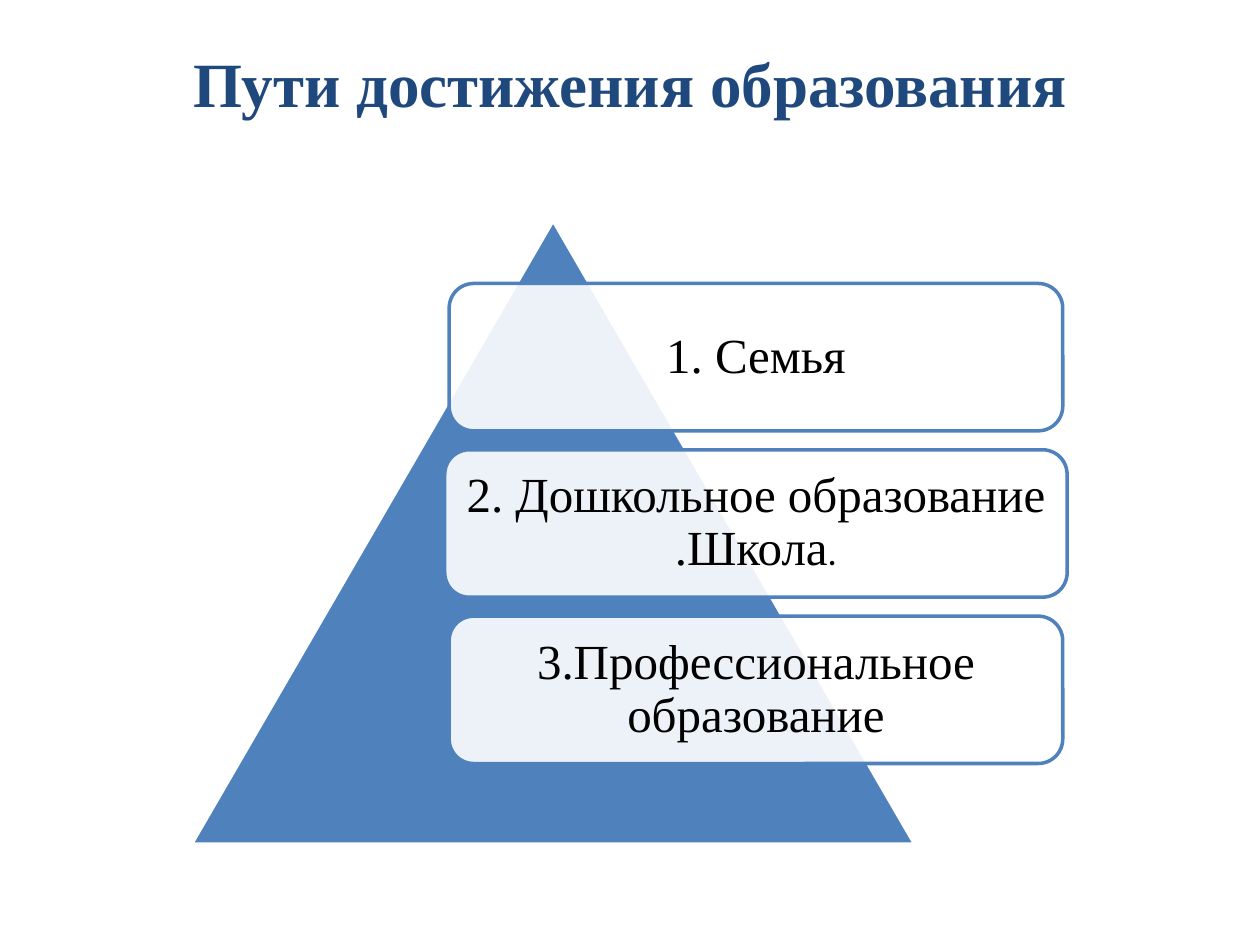
from dataclasses import dataclass

from lxml.etree import SubElement
from pptx import Presentation
from pptx.dml.color import RGBColor
from pptx.enum.shapes import MSO_SHAPE as Shape
from pptx.enum.text import MSO_ANCHOR as Anchor, PP_ALIGN as Align
from pptx.oxml.ns import qn
from pptx.util import Inches, Pt


@dataclass(frozen=True)
class Theme:
    accent: RGBColor = RGBColor(0x4F, 0x81, 0xBD)
    heading: RGBColor = RGBColor(0x1F, 0x49, 0x7D)
    text: RGBColor = RGBColor(0, 0, 0)
    paper: RGBColor = RGBColor(0xFF, 0xFF, 0xFF)
    font: str = "Times New Roman"
    small_font: str = "Calibri"
    title_size: int = 36
    step_size: int = 28
    small_size: int = 21
    line_width: int = 2
    step_opacity: int = 90


class SlideBuilder:
    def __init__(self, slide, theme):
        self.slide = slide
        self.theme = theme

    def set_font(self, font, name, size, color, bold=False):
        font.name = name
        font.size = Pt(size)
        font.color.rgb = color
        font.bold = bold

    def add_title(self, text, left, top, width, height):
        title = self.slide.shapes.title
        title.left, title.top = Inches(left), Inches(top)
        title.width, title.height = Inches(width), Inches(height)
        title.text_frame.text = text
        title.text_frame.vertical_anchor = Anchor.TOP
        paragraph = title.text_frame.paragraphs[0]
        paragraph.alignment = Align.CENTER
        self.set_font(paragraph.font, self.theme.font, self.theme.title_size,
                      self.theme.heading, bold=True)

    def add_outlined(self, kind, left, top, width, height, fill, line):
        shape = self.slide.shapes.add_shape(
            kind, Inches(left), Inches(top), Inches(width), Inches(height))
        shape.shadow.inherit = False
        shape.fill.solid()
        shape.fill.fore_color.rgb = fill
        shape.line.color.rgb = line
        shape.line.width = Pt(self.theme.line_width)
        return shape

    def add_pyramid(self, left, top, width, height):
        self.add_outlined(Shape.ISOSCELES_TRIANGLE, left, top, width, height,
                          self.theme.accent, self.theme.paper)

    def add_step(self, text, ending, center, top, width, height):
        theme = self.theme
        shape = self.add_outlined(Shape.ROUNDED_RECTANGLE, center - width / 2, top,
                                  width, height, theme.paper, theme.accent)
        color = shape.fill._xPr.find(qn("a:solidFill"))[0]
        SubElement(color, qn("a:alpha"), val=str(theme.step_opacity * 1000))
        frame = shape.text_frame
        frame.word_wrap = True
        frame.vertical_anchor = Anchor.MIDDLE
        frame.margin_left = frame.margin_right = Inches(0.11)
        frame.margin_top = frame.margin_bottom = Inches(0.11)
        paragraph = frame.paragraphs[0]
        paragraph.alignment = Align.CENTER
        paragraph.line_spacing = 0.9
        self.set_font(paragraph.font, theme.font, theme.step_size, theme.text)
        paragraph.add_run().text = text
        if ending:
            run = paragraph.add_run()
            run.text = ending
            self.set_font(run.font, theme.small_font, theme.small_size, theme.text)


def main():
    presentation = Presentation()
    presentation.slide_width = Inches(10)
    presentation.slide_height = Inches(7.5)
    slide = presentation.slides.add_slide(presentation.slide_layouts[5])
    builder = SlideBuilder(slide, Theme())

    builder.add_title("Пути достижения образования", 0.5, 0.3, 9, 1.25)
    builder.add_pyramid(1.52, 1.75, 5.74, 4.95)

    steps = [
        ("1. Семья", "", 4.87),
        ("2. Дошкольное образование .Школа", ".", 4.94),
        ("3.Профессиональное образование", "", 4.87),
    ]
    first_top, pitch = 2.25, 1.32
    for index, (text, ending, width) in enumerate(steps):
        builder.add_step(text, ending, 6, first_top + index * pitch, width, 1.17)

    presentation.save("out.pptx")


if __name__ == "__main__":
    main()
